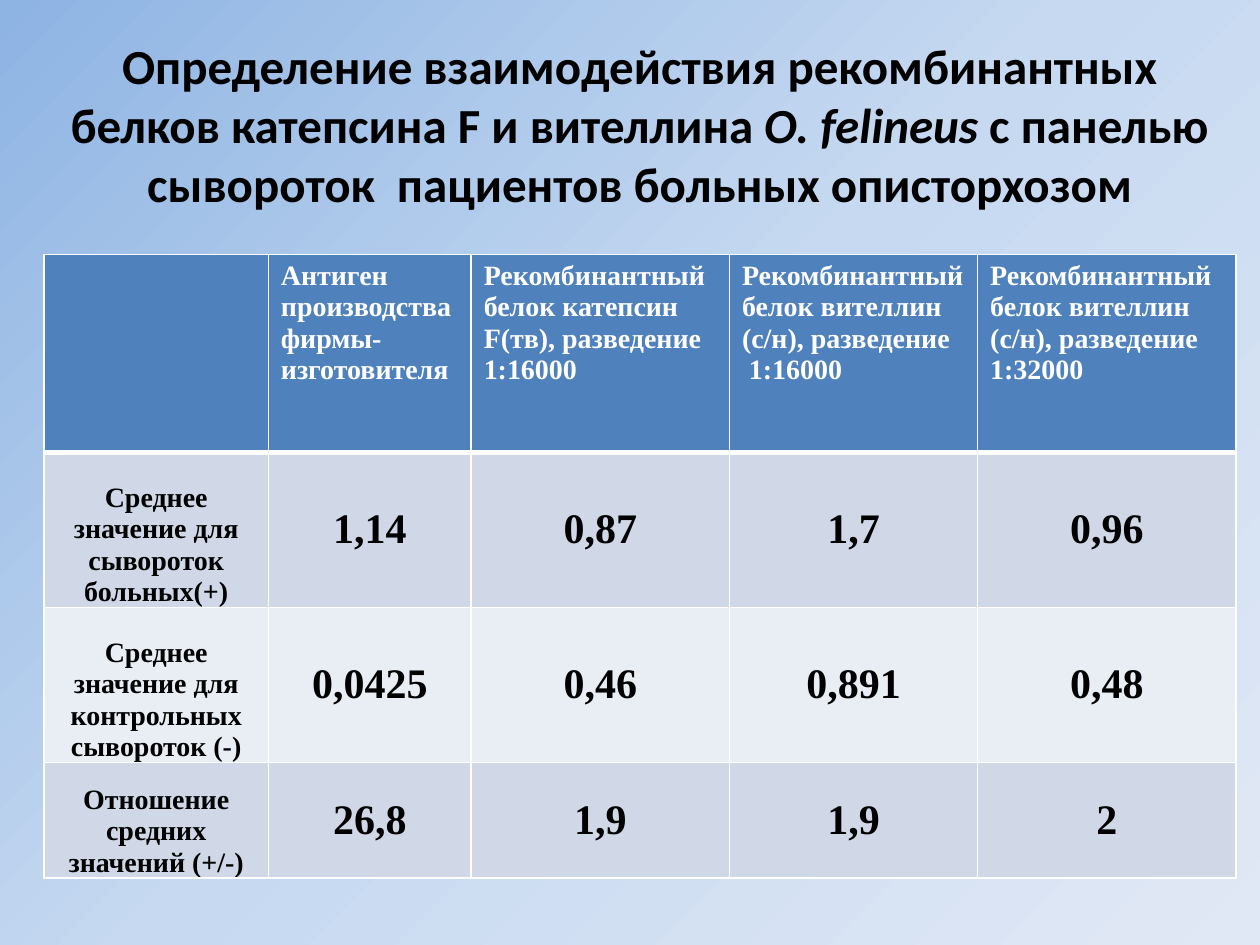
from lxml import etree
from pptx import Presentation, util as u
from pptx.dml.color import RGBColor
from pptx.enum import text
from pptx.oxml.ns import qn

TITLE = [
    ("Определение взаимодействия рекомбинантных белков катепсина F и вителлина ", False),
    ("O. felineus ", True),
    ("с панелью сывороток  пациентов больных описторхозом", False),
]
ROWS = [
    ["", "Антиген\nпроизводства фирмы-изготовителя",
     "Рекомбинантный белок катепсин F(тв), разведение 1:16000",
     "Рекомбинантный белок вителлин (с/н), разведение\n 1:16000",
     "Рекомбинантный белок вителлин (с/н), разведение\n1:32000"],
    ["Среднее значение для сывороток больных(+)", "1,14", "0,87", "1,7", "0,96"],
    ["Среднее значение для контрольных сывороток (-)", "0,0425", "0,46", "0,891", "0,48"],
    ["Отношение средних значений (+/-)", "26,8", "1,9", "1,9", "2"],
]
COLUMN_WIDTHS = [1.78, 1.61, 2.05, 1.97, 2.05]
ROW_HEIGHTS = [1.57, 1.23, 1.23, 0.92]
LEFT, WIDTH = 0.35, 9.45
TITLE_TOP, TITLE_HEIGHT, TABLE_TOP = 0.36, 1.25, 2.02
COLORS = {"header": "4F81BD", "odd": "D0D8E8", "even": "E9EDF4",
          "light": "FFFFFF", "dark": "000000"}
GRADIENT = [(0, "8EB4E3"), (49, "C6D9F1"), (100, "E1E8F5")]


def style_run(run, size, font, color, italic=False):
    run.font.size = u.Pt(size)
    run.font.name = font
    run.font.bold = True
    run.font.italic = italic
    run.font.color.rgb = RGBColor.from_string(color)


def add_color(parent, color):
    etree.SubElement(parent, qn("a:srgbClr"), val=color)


def paint_background(slide):
    slide.background.fill.gradient()
    gradient = slide.element.find(".//" + qn("a:gradFill"))
    stops = gradient.find(qn("a:gsLst"))
    for stop in list(stops):
        stops.remove(stop)
    for position, color in GRADIENT:
        add_color(etree.SubElement(stops, qn("a:gs"), pos=str(position * 1000)), color)
    gradient.find(qn("a:lin")).set("ang", str(45 * 60000))


def add_title(slide):
    box = slide.shapes.add_textbox(*map(u.Inches, (LEFT, TITLE_TOP, WIDTH, TITLE_HEIGHT)))
    frame = box.text_frame
    frame.word_wrap = True
    frame.vertical_anchor = text.MSO_ANCHOR.MIDDLE
    paragraph = frame.paragraphs[0]
    paragraph.alignment = text.PP_ALIGN.CENTER
    for content, italic in TITLE:
        run = paragraph.add_run()
        run.text = content
        style_run(run, 28, "Calibri", COLORS["dark"], italic)


def set_borders(cell, row):
    properties = cell._tc.get_or_add_tcPr()
    widths = {"L": 1, "R": 1, "T": 3 if row == 1 else 1, "B": 3 if row == 0 else 1}
    for index, (side, width) in enumerate(widths.items()):
        line = etree.Element(qn("a:ln" + side), w=str(u.Pt(width)))
        add_color(etree.SubElement(line, qn("a:solidFill")), COLORS["light"])
        properties.insert(index, line)


def format_cell(cell, row, column):
    header = row == 0
    fill = "header" if header else "odd" if row % 2 else "even"
    cell.fill.solid()
    cell.fill.fore_color.rgb = RGBColor.from_string(COLORS[fill])
    if not header:
        cell.margin_left = cell.margin_right = u.Inches(0.07)
        cell.margin_top = cell.margin_bottom = 0
        cell.vertical_anchor = text.MSO_ANCHOR.MIDDLE if column else text.MSO_ANCHOR.BOTTOM
    for paragraph in cell.text_frame.paragraphs:
        paragraph.alignment = text.PP_ALIGN.LEFT if header else text.PP_ALIGN.CENTER
        for run in paragraph.runs:
            style_run(run, 16 if header or column == 0 else 24, "Times New Roman",
                      COLORS["light" if header else "dark"])
    set_borders(cell, row)


def add_results(slide):
    table = slide.shapes.add_table(
        len(ROWS), len(COLUMN_WIDTHS),
        *map(u.Inches, (LEFT, TABLE_TOP, WIDTH, sum(ROW_HEIGHTS)))).table
    for column, width in zip(table.columns, COLUMN_WIDTHS):
        column.width = u.Inches(width)
    for row, height in zip(table.rows, ROW_HEIGHTS):
        row.height = u.Inches(height)
    for row, values in enumerate(ROWS):
        for column, value in enumerate(values):
            cell = table.cell(row, column)
            cell.text_frame.text = value
            format_cell(cell, row, column)


def main():
    presentation = Presentation()
    presentation.slide_width, presentation.slide_height = u.Inches(10), u.Inches(7.5)
    slide = presentation.slides.add_slide(presentation.slide_layouts[6])
    paint_background(slide)
    add_title(slide)
    add_results(slide)
    presentation.save("out.pptx")


if __name__ == "__main__":
    main()
